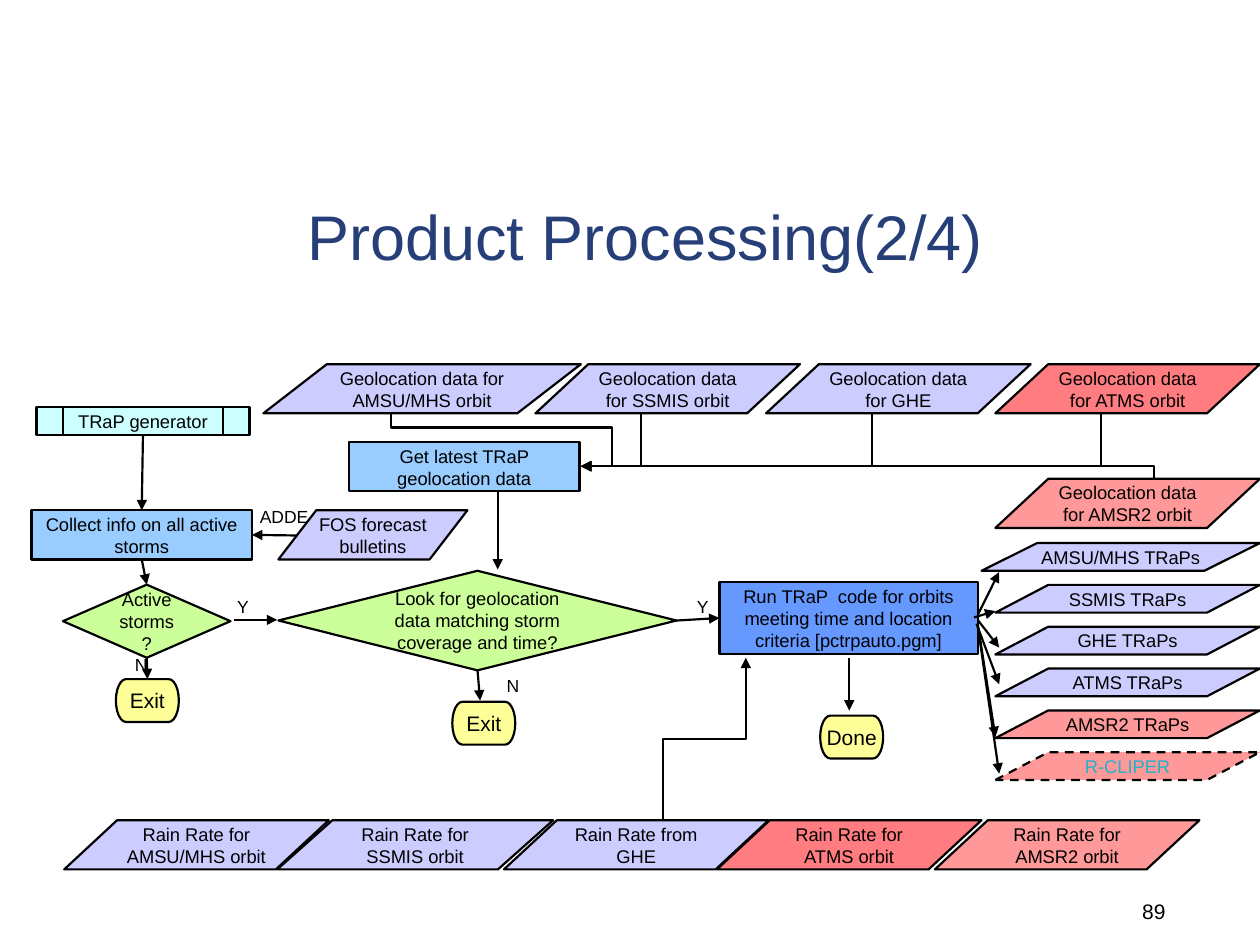
from lxml.etree import SubElement
from pptx import Presentation
from pptx.dml.color import RGBColor
from pptx.enum.dml import MSO_LINE
from pptx.enum.shapes import MSO_CONNECTOR, MSO_SHAPE
from pptx.enum.text import MSO_ANCHOR, PP_ALIGN
from pptx.oxml.ns import qn
from pptx.util import Inches, Pt

LILAC, RED, PINK = "CCCCFF", "FF7C80", "FF9999"
SKY, GREEN, YELLOW = "99CCFF", "CCFF99", "FFFF99"
BLACK = "000000"
DATA = MSO_SHAPE.FLOWCHART_DATA
PROCESS = MSO_SHAPE.FLOWCHART_PROCESS
DECISION = MSO_SHAPE.FLOWCHART_DECISION
END = MSO_SHAPE.FLOWCHART_TERMINATOR
TOP, LEFT, BOTTOM, RIGHT = range(4)

# key: kind, text, fill, (left, top, width, height)
STEPS = {
    "generator": (MSO_SHAPE.FLOWCHART_PREDEFINED_PROCESS, "TRaP generator",
                  "CCFFFF", (0.29, 3.23, 1.69, 0.22)),
    "latest": (PROCESS, "Get latest TRaP geolocation data", SKY, (2.77, 3.51, 1.83, 0.39)),
    "collect": (PROCESS, "Collect info on all active storms", SKY, (0.25, 4.05, 1.75, 0.39)),
    "bulletins": (DATA, "FOS forecast bulletins", LILAC, (2.21, 4.05, 1.5, 0.39)),
    "active": (DECISION, "Active storms?", GREEN, (0.5, 4.64, 1.33, 0.58)),
    "look": (DECISION, "Look for geolocation data matching storm coverage and time?",
             GREEN, (2.21, 4.53, 3.16, 0.79)),
    "run": (PROCESS, "Run TRaP  code for orbits meeting time and location criteria "
            "[pctrpauto.pgm]", "6699FF", (5.71, 4.62, 2.05, 0.57)),
    "no storms": (END, "Exit", YELLOW, (0.92, 5.39, 0.5, 0.34)),
    "no match": (END, "Exit", YELLOW, (3.59, 5.57, 0.5, 0.34)),
    "done": (END, "Done", YELLOW, (6.51, 5.68, 0.5, 0.34)),
}
# text, fill, left, top, width
ORBITS = [
    ("Geolocation data for AMSU/MHS orbit", LILAC, 2.09, 2.89, 2.52),
    ("Geolocation data for SSMIS orbit", LILAC, 4.25, 2.89, 2.1),
    ("Geolocation data for GHE", LILAC, 6.08, 2.89, 2.1),
    ("Geolocation data for ATMS orbit", RED, 7.9, 2.89, 2.1),
    ("Geolocation data for AMSR2 orbit", PINK, 7.9, 3.8, 2.1),
    ("Rain Rate for SSMIS orbit", LILAC, 2.2, 6.51, 2.19),
    ("Rain Rate for AMSU/MHS orbit", LILAC, 0.51, 6.51, 2.1),
    ("Rain Rate from GHE", LILAC, 4.0, 6.51, 2.1),
    ("Rain Rate for ATMS orbit", RED, 5.69, 6.51, 2.1),
    ("Rain Rate for AMSR2 orbit", PINK, 7.42, 6.51, 2.1),
]
# text, fill, left; then the arrow that leads to it
OUTPUTS = [
    ("AMSU/MHS TRaPs", LILAC, 7.79, (7.76, 4.88), (7.93, 4.54)),
    ("SSMIS TRaPs", LILAC, 7.9, (7.73, 4.9), (7.9, 4.85)),
    ("GHE TRaPs", LILAC, 7.9, (7.76, 4.92), (7.93, 5.14)),
    ("ATMS TRaPs", LILAC, 7.9, (7.75, 4.95), (7.93, 5.43)),
    ("AMSR2 TRaPs", PINK, 7.9, (7.76, 4.95), (7.9, 5.85)),
    ("R-CLIPER", PINK, 7.9, (7.76, 4.97), (7.93, 6.14)),
]
OUTPUT_TOP, OUTPUT_STEP, PAGE_RIGHT = 4.31, 0.332, 10
# an end is a point or a (step, side) pair
ARROWS = [
    (("generator", BOTTOM), ("collect", TOP)),
    ((2.36, 4.25), ("collect", RIGHT)),
    (("collect", BOTTOM), ("active", TOP)),
    (("active", BOTTOM), ("no storms", TOP)),
    ((1.86, 4.92), (2.2, 4.92)),
    ((3.95, 3.9), (3.95, 4.52)),
    (("look", BOTTOM), (3.81, 5.56)),
    (("look", RIGHT), ("run", LEFT)),
    ((6.74, 5.22), (6.74, 5.64)),
]
LATEST_IN = (4.61, 3.7)
# start, end, preset, adjustments
ELBOWS = [((x, y), LATEST_IN, "bentConnector2", ())
          for x, y in [(5.09, 3.28), (6.92, 3.28), (8.74, 3.28), (9.16, 3.8)]]
ELBOWS += [
    ((3.1, 3.28), LATEST_IN, "bentConnector4", (26800, 116600)),
    ((5.26, 6.51), (5.92, 5.22), "bentConnector3", (50000,)),
]
LABELS = [
    ("ADDE", 1.92, 3.97, 0.67), ("N", 1.0, 5.14, 0.17), ("Y", 5.46, 4.68, 0.17),
    ("N", 3.95, 5.31, 0.17), ("Y", 1.81, 4.68, 0.17),
]


def rgb(color):
    return RGBColor.from_string(color)


def write(sp, text, size, color=BLACK, align=PP_ALIGN.CENTER,
          anchor=MSO_ANCHOR.MIDDLE, margins=(0.1, 0.05, 0.1, 0.05)):
    tf = sp.text_frame
    tf.word_wrap, tf.vertical_anchor = True, anchor
    for side, value in zip(("left", "top", "right", "bottom"), margins):
        setattr(tf, f"margin_{side}", Inches(value))
    p = tf.paragraphs[0]
    p.alignment = align
    r = p.add_run()
    r.text = text
    for name, value in {"name": "Arial", "size": Pt(size), "bold": False}.items():
        setattr(r.font, name, value)
    r.font.color.rgb = rgb(color)


def add_box(kind, text, fill, at, color=BLACK):
    sp = s.shapes.add_shape(kind, *map(Inches, at))
    sp.shadow.inherit = False
    sp.fill.solid()
    sp.fill.fore_color.rgb = rgb(fill)
    sp.line.color.rgb = rgb(BLACK)
    sp.line.width = Pt(1.25)
    margins = (0.1, 0.05, 0.1, 0.05) if kind == DECISION else (0.02,) * 4
    write(sp, text, 12 if kind == END else 10.5, color, margins=margins)
    return sp


def add_line(kind, start, end):
    line = s.shapes.add_connector(kind, *map(Inches, (*start, *end)))
    line.line.color.rgb = rgb(BLACK)
    line.line.width = Pt(1.25)
    SubElement(line.line._get_or_add_ln(), qn("a:tailEnd"), type="triangle")
    SubElement(line._element.spPr, qn("a:effectLst"))
    return line


def add_arrow(start, end):
    points = [(0, 0) if isinstance(e[0], str) else e for e in (start, end)]
    line = add_line(MSO_CONNECTOR.STRAIGHT, *points)
    for e, connect in ((start, line.begin_connect), (end, line.end_connect)):
        if isinstance(e[0], str):
            connect(steps[e[0]], e[1])


def add_elbow(start, end, preset, adjustments):
    """Elbow that leaves its start vertically: a turned box around the midpoint."""
    (x0, y0), (x1, y1) = start, end
    cx, cy, w, h = (x0 + x1) / 2, (y0 + y1) / 2, abs(y1 - y0), abs(x1 - x0)
    line = add_line(MSO_CONNECTOR.ELBOW, (cx - w / 2, cy - h / 2), (cx + w / 2, cy + h / 2))
    xfrm = line._element.spPr.find(qn("a:xfrm"))
    xfrm.set("rot", str((90 if y1 > y0 else 270) * 60000))
    if (x1 > x0) == (y1 > y0):
        xfrm.set("flipV", "1")
    geom = line._element.spPr.find(qn("a:prstGeom"))
    geom.set("prst", preset)
    for i, value in enumerate(adjustments, 1):
        SubElement(geom.find(qn("a:avLst")), qn("a:gd"), name=f"adj{i}", fmla=f"val {value}")


prs = Presentation()
prs.slide_width, prs.slide_height = Inches(10), Inches(7.5)
s = prs.slides.add_slide(prs.slide_layouts[5])

title = s.shapes.title
title.left, title.top, title.width, title.height = map(Inches, (0.83, 0.92, 8.58, 1.25))
write(title, "Product Processing(2/4)", 36, "263F78",
      anchor=MSO_ANCHOR.BOTTOM, margins=(0, 0.05, 0, 0))
number = s.shapes.add_textbox(*map(Inches, (7.17, 6.83, 2.08, 0.5)))
write(number, "89", 12, align=PP_ALIGN.RIGHT, anchor=MSO_ANCHOR.BOTTOM, margins=(0,) * 4)

steps = {key: add_box(*step) for key, step in STEPS.items()}
for text, fill, left, top, width in ORBITS:
    add_box(DATA, text, fill, (left, top, width, 0.39))
for i, (text, fill, left, start, end) in enumerate(OUTPUTS):
    at = (left, OUTPUT_TOP + i * OUTPUT_STEP, PAGE_RIGHT - left, 0.22)
    optional = text == "R-CLIPER"
    sp = add_box(DATA, text, fill, at, "21B2C9" if optional else BLACK)
    if optional:
        sp.line.dash_style = MSO_LINE.DASH
    add_arrow(start, end)
for arrow in ARROWS:
    add_arrow(*arrow)
for elbow in ELBOWS:
    add_elbow(*elbow)
for text, left, top, width in LABELS:
    label = s.shapes.add_textbox(*map(Inches, (left, top, width, 0.27)))
    write(label, text, 10, anchor=MSO_ANCHOR.TOP)

prs.save("out.pptx")
